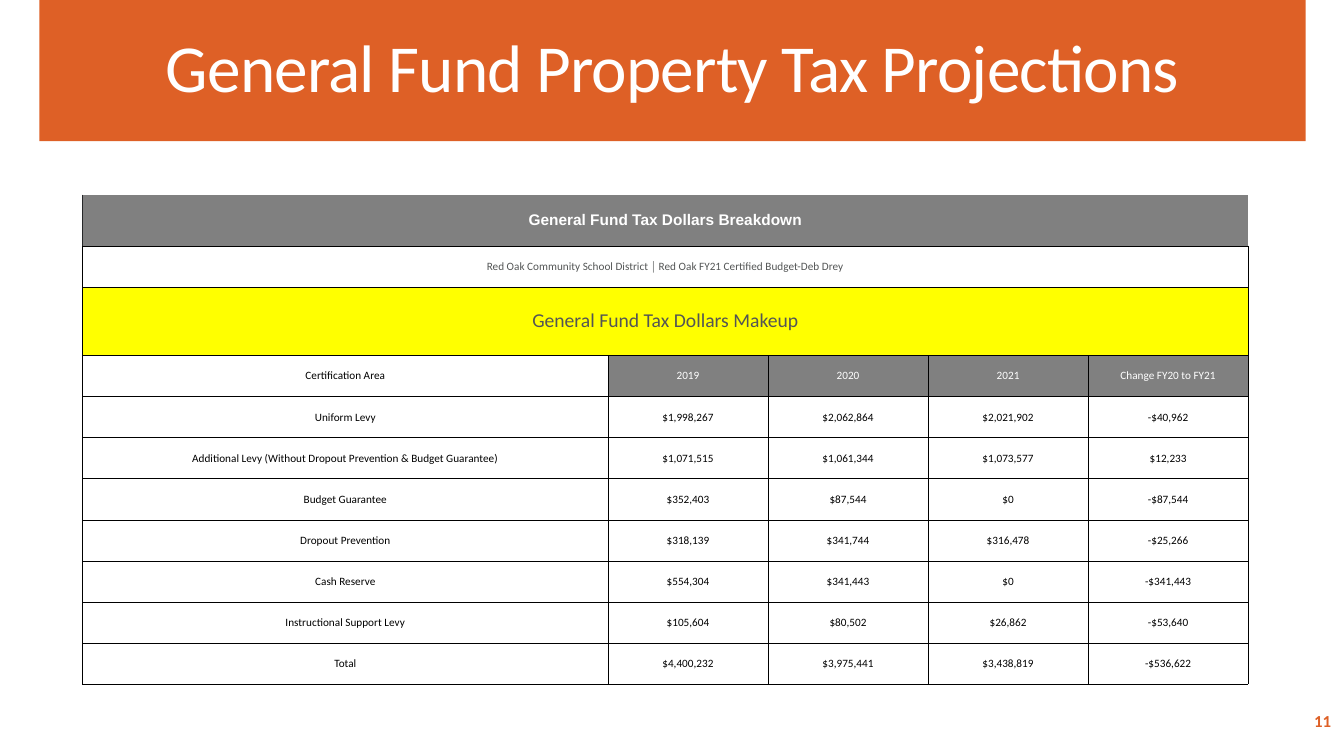
from lxml.etree import SubElement
from pptx import Presentation
from pptx.dml.color import RGBColor
from pptx.enum.text import MSO_ANCHOR as Anchor, MSO_AUTO_SIZE as AutoSize, PP_ALIGN as Align
from pptx.oxml.ns import qn
from pptx.util import Inches, Pt

ORANGE, GREY, YELLOW = "DE6026", "808080", "FFFF00"
WHITE, BLACK, SLATE, CHARCOAL = "FFFFFF", "000000", "535555", "262729"

TABLE_BOX = (0.82, 1.93, 11.56, 4.86)
AREA_WIDTH, BANNER_HEIGHT, MAKEUP_HEIGHT = 5.21, 0.51, 0.68
GRID = dict.fromkeys(("lnL", "lnR", "lnT", "lnB"), BLACK)
BANNER_BORDERS = {"lnL": CHARCOAL, "lnR": None, "lnT": None, "lnB": BLACK}

BANNERS = [
    ("General Fund Tax Dollars Breakdown", GREY, BANNER_BORDERS,
     dict(size=11, font="Arial", color=WHITE, bold=True)),
    ("Red Oak Community School District │ Red Oak FY21 Certified Budget-Deb Drey",
     None, GRID, dict(size=8, color=SLATE)),
    ("General Fund Tax Dollars Makeup", YELLOW, GRID, dict(size=14, color=SLATE)),
]
HEADINGS = ["Certification Area", "2019", "2020", "2021", "Change FY20 to FY21"]
LEVIES = [
    ["Uniform Levy", "$1,998,267", "$2,062,864", "$2,021,902", "-$40,962"],
    ["Additional Levy (Without Dropout Prevention & Budget Guarantee)",
     "$1,071,515", "$1,061,344", "$1,073,577", "$12,233"],
    ["Budget Guarantee", "$352,403", "$87,544", "$0", "-$87,544"],
    ["Dropout Prevention", "$318,139", "$341,744", "$316,478", "-$25,266"],
    ["Cash Reserve", "$554,304", "$341,443", "$0", "-$341,443"],
    ["Instructional Support Levy", "$105,604", "$80,502", "$26,862", "-$53,640"],
    ["Total", "$4,400,232", "$3,975,441", "$3,438,819", "-$536,622"],
]


def paint(fill, color):
    """Fill with a hex colour, or clear the fill when there is none."""
    if color is None:
        fill.background()
    else:
        fill.solid()
        fill.fore_color.rgb = RGBColor.from_string(color)


def write(frame, text, size, color, font="Calibri", bold=False, align=Align.CENTER,
          line_spacing=None, tracking=None):
    """Put one formatted line into a text frame."""
    paragraph = frame.paragraphs[0]
    paragraph.alignment = align
    paragraph.line_spacing = line_spacing
    run = paragraph.add_run()
    run.text = text
    run.font.name, run.font.size, run.font.bold = font, Pt(size), bold
    paint(run.font.fill, color)
    if tracking is not None:
        run.font._element.set("spc", str(round(tracking * 100)))


def draw_borders(cell, borders):
    """Draw half-point cell borders, leaving out those without a colour."""
    properties = cell._tc.get_or_add_tcPr()
    for side, color in borders.items():
        line = SubElement(properties, qn(f"a:{side}"), w=str(Pt(0.5)))
        if color is None:
            SubElement(line, qn("a:noFill"))
        else:
            SubElement(SubElement(line, qn("a:solidFill")), qn("a:srgbClr"), val=color)


def style_cell(cell, fill=None, borders=GRID):
    """Give a cell its borders, fill, margins and anchor."""
    draw_borders(cell, borders)
    paint(cell.fill, fill)
    cell.margin_left = cell.margin_right = cell.margin_top = cell.margin_bottom = 0
    cell.vertical_anchor = Anchor.MIDDLE


def add_title(slide, text):
    """Turn the title placeholder into the orange band."""
    title = slide.shapes.title
    title.left, title.top, title.width, title.height = map(Inches, (0.39, 0, 12.56, 1.4))
    paint(title.fill, ORANGE)
    frame = title.text_frame
    frame.word_wrap, frame.auto_size = True, AutoSize.NONE
    frame.vertical_anchor = Anchor.MIDDLE
    write(frame, text, size=48, color=WHITE, line_spacing=0.9, tracking=-0.6)


def add_page_number(slide, text):
    """Add the page number at the lower right."""
    box = slide.shapes.add_textbox(*map(Inches, (11.63, 6.95, 1.67, 0.4)))
    box.text_frame.word_wrap = True
    box.text_frame.vertical_anchor = Anchor.MIDDLE
    write(box.text_frame, text, size=12, color=ORANGE, bold=True, align=Align.RIGHT)


def size_grid(table):
    """Share the table's size out among its columns and rows."""
    width, height = TABLE_BOX[2:]
    year_width = (width - AREA_WIDTH) / (len(table.columns) - 1)
    row_height = (height - BANNER_HEIGHT - MAKEUP_HEIGHT) / (len(table.rows) - 2)
    for index, column in enumerate(table.columns):
        column.width = Inches(year_width if index else AREA_WIDTH)
    for index, row in enumerate(table.rows):
        row.height = Inches({0: BANNER_HEIGHT, 2: MAKEUP_HEIGHT}.get(index, row_height))


def add_levy_table(slide):
    """Add the table of banners, headings and levies."""
    rows, columns = len(BANNERS) + 1 + len(LEVIES), len(HEADINGS)
    table = slide.shapes.add_table(rows, columns, *map(Inches, TABLE_BOX)).table
    table.first_row = table.horz_banding = False
    size_grid(table)
    for row, (text, fill, borders, text_format) in enumerate(BANNERS):
        for column in range(columns):
            style_cell(table.cell(row, column), fill, borders)
        table.cell(row, 0).merge(table.cell(row, columns - 1))
        write(table.cell(row, 0).text_frame, text, **text_format)
    for row, values in enumerate([HEADINGS] + LEVIES, start=len(BANNERS)):
        for column, text in enumerate(values):
            is_heading = values is HEADINGS and column > 0
            cell = table.cell(row, column)
            style_cell(cell, GREY if is_heading else None)
            write(cell.text_frame, text, size=8, color=WHITE if is_heading else BLACK)


def main():
    """Build and save the slide."""
    presentation = Presentation()
    presentation.slide_width, presentation.slide_height = Inches(13.33), Inches(7.5)
    slide = presentation.slides.add_slide(presentation.slide_layouts[5])
    add_page_number(slide, "11")
    add_title(slide, "General Fund Property Tax Projections")
    add_levy_table(slide)
    presentation.save("out.pptx")


if __name__ == "__main__":
    main()
